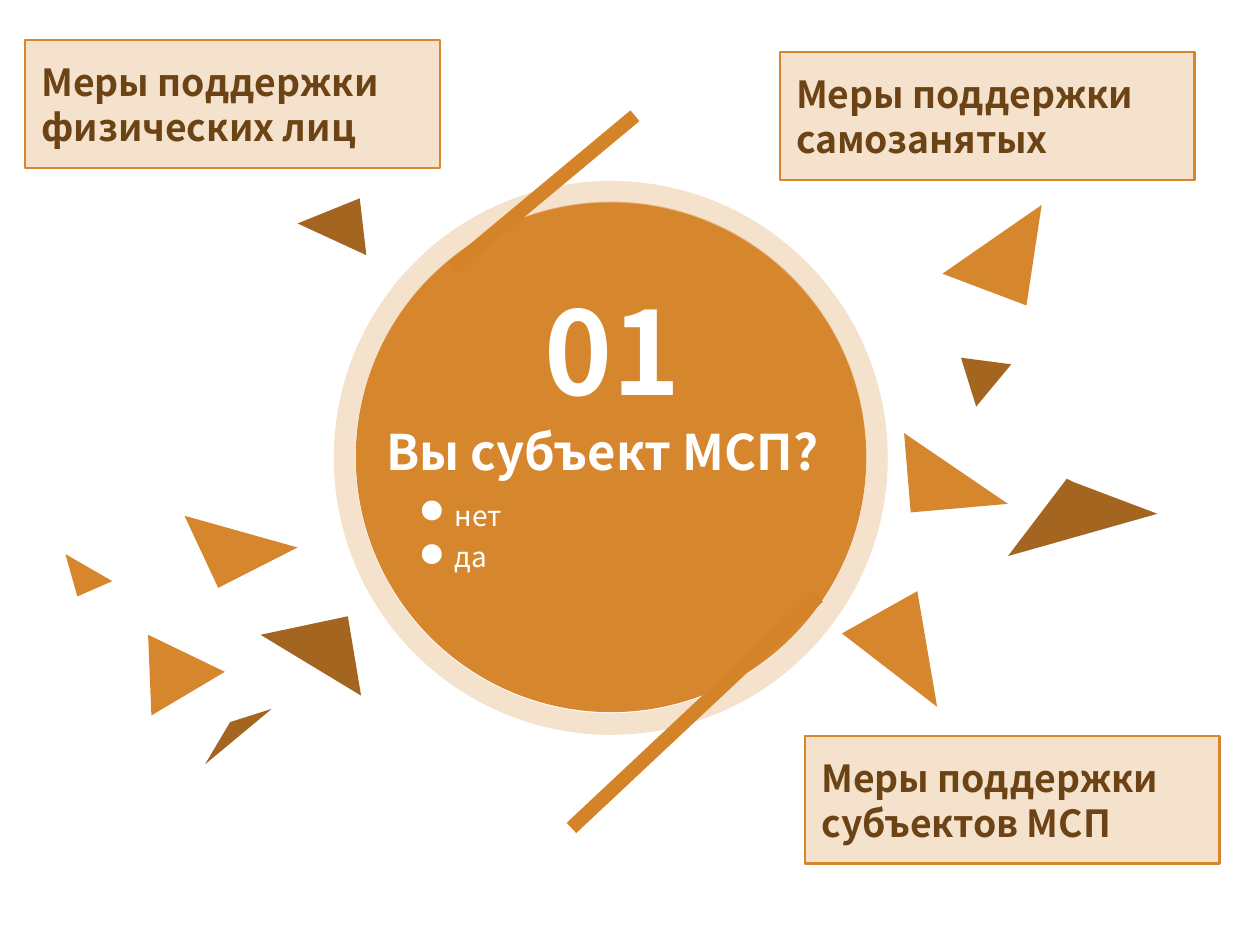
import dataclasses

import pptx
import pptx.dml.color
import pptx.enum.shapes
import pptx.enum.text
import pptx.oxml.ns
import pptx.util
from lxml import etree

Cm = pptx.util.Cm
SHAPES = pptx.enum.shapes.MSO_SHAPE
ANCHOR = pptx.enum.text.MSO_ANCHOR
ALIGN = pptx.enum.text.PP_ALIGN


@dataclasses.dataclass(frozen=True)
class Theme:
    """Colours, font and sizes of the slide."""
    font: str = "Noto Sans CJK SC"
    orange: str = "D6862D"
    brown: str = "A36520"
    ring: str = "EFCFAB"
    stroke: str = "D58328"
    ink: str = "6C4315"
    white: str = "FFFFFF"
    number: float = 49.5
    title: float = 21
    measure: float = 16
    answer: float = 12


THEME = Theme()

SHARDS = [
    (THEME.orange, [(2.79, 7.8), (4.5, 8.28), (3.3, 8.89)]),
    (THEME.brown, [(5.46, 10.52), (3.94, 9.6), (5.26, 9.32)]),
    (THEME.orange, [(2.24, 9.6), (3.4, 10.16), (2.29, 10.82)]),
    (THEME.orange, [(0.99, 8.38), (1.17, 9.02), (1.7, 8.79)]),
    (THEME.brown, [(3.48, 10.92), (3.1, 11.56), (4.11, 10.72)]),
    (THEME.brown, [(5.44, 3), (5.54, 3.86), (4.5, 3.38)]),
    (THEME.orange, [(14.25, 4.14), (15.75, 3.1), (15.52, 4.62)]),
    (THEME.brown, [(14.53, 5.41), (15.29, 5.51), (14.76, 6.15)]),
    (THEME.orange, [(13.67, 6.55), (13.77, 7.75), (15.24, 7.62)]),
    (THEME.brown, [(16.13, 7.24), (15.24, 8.41), (17.5, 7.77), (16.23, 7.29)]),
    (THEME.orange, [(12.73, 9.58), (13.87, 8.94), (14.17, 10.69)]),
]

MEASURES = [
    (12.17, 11.13, "Меры поддержки субъектов МСП"),
    (0.38, 0.61, "Меры поддержки физических лиц"),
    (11.79, 0.79, "Меры поддержки самозанятых"),
]


def rgb(color):
    """Turn a hex string into a colour."""
    return pptx.dml.color.RGBColor.from_string(color)


def apply(obj, values):
    """Set attributes from a dict of format values."""
    for name, value in values.items():
        setattr(obj, name, value)


def paint(sp, fill=None, line=None, width=1, fill_alpha=None, line_alpha=None):
    """Give a shape its fill and line, with opacity in percent."""
    sp.shadow.inherit = False
    for fmt, color, alpha in ((sp.fill, fill, fill_alpha), (sp.line.fill, line, line_alpha)):
        if color is None:
            fmt.background()
            continue
        fmt.solid()
        fmt.fore_color.rgb = rgb(color)
        if alpha is not None:
            clr = fmt._xPr.find(".//" + pptx.oxml.ns.qn("a:srgbClr"))
            etree.SubElement(clr, pptx.oxml.ns.qn("a:alpha"), val=str(alpha * 1000))
    if line is not None:
        sp.line.width = pptx.util.Pt(width)


def write(tf, lines, size, color, bold=False, spacing=1.0, **frame):
    """Fill a text frame with one paragraph a line."""
    apply(tf, {"word_wrap": True, **frame})
    for i, text in enumerate(lines):
        p = tf.add_paragraph() if i else tf.paragraphs[0]
        apply(p, {"alignment": ALIGN.LEFT, "line_spacing": spacing})
        r = p.add_run()
        r.text = text
        apply(r.font, {"name": THEME.font, "size": pptx.util.Pt(size), "bold": bold})
        r.font.color.rgb = rgb(color)


def add_circle(s, left, top, size, **look):
    """Add a circle."""
    sp = s.shapes.add_shape(SHAPES.OVAL, Cm(left), Cm(top), Cm(size), Cm(size))
    paint(sp, **look)


def add_shard(s, color, points):
    """Add a closed outline through the points."""
    corners = [(Cm(x), Cm(y)) for x, y in points]
    builder = s.shapes.build_freeform(*corners[0], scale=1.0)
    builder.add_line_segments(corners[1:], close=True)
    paint(builder.convert_to_shape(), fill=color)


def add_text(s, left, top, width, height, lines, size, **style):
    """Add a white text box."""
    sp = s.shapes.add_textbox(Cm(left), Cm(top), Cm(width), Cm(height))
    write(sp.text_frame, lines, size, THEME.white, **style)


def add_stroke(s, *ends):
    """Add a thick straight line."""
    sp = s.shapes.add_connector(pptx.enum.shapes.MSO_CONNECTOR.STRAIGHT, *map(Cm, ends))
    sp.line.color.rgb = rgb(THEME.stroke)
    sp.line.width = pptx.util.Pt(6)
    etree.SubElement(sp._element.spPr, pptx.oxml.ns.qn("a:effectLst"))


def add_measure(s, left, top, text):
    """Add a framed support measure."""
    sp = s.shapes.add_shape(SHAPES.ROUNDED_RECTANGLE, Cm(left), Cm(top), Cm(6.27), Cm(1.93))
    sp.adjustments[0] = 0
    paint(sp, fill=THEME.orange, line=THEME.orange, fill_alpha=24)
    write(sp.text_frame, [text], THEME.measure, THEME.ink, bold=True,
          vertical_anchor=ANCHOR.MIDDLE)


def main():
    """Build the slide."""
    prs = pptx.Presentation()
    apply(prs, {"slide_width": Cm(19.05), "slide_height": Cm(14.29)})
    s = prs.slides.add_slide(prs.slide_layouts[6])
    add_circle(s, 5.38, 3.05, 7.72, fill=THEME.orange)
    add_circle(s, 5.21, 2.9, 8.05, line=THEME.ring, width=9.25, line_alpha=60)
    for color, points in SHARDS:
        add_shard(s, color, points)
    add_text(s, 5.59, 6.07, 7.62, 1.24, ["Вы субъект МСП?"], THEME.title,
             bold=True, spacing=1.2)
    for row in range(2):
        add_circle(s, 6.38, 7.57 + 0.66 * row, 0.3, fill=THEME.white)
    add_text(s, 6.53, 7.32, 7.16, 1.57, ["нет", "да"], THEME.answer,
             spacing=1.2, margin_left=Cm(0.35))
    add_text(s, 7.98, 4.11, 2.69, 2.36, ["01"], THEME.number, bold=True, word_wrap=False)
    add_stroke(s, 9.6, 1.75, 6.83, 4.06)
    add_stroke(s, 12.37, 9.02, 8.64, 12.52)
    for measure in MEASURES:
        add_measure(s, *measure)
    prs.save("out.pptx")


if __name__ == "__main__":
    main()
